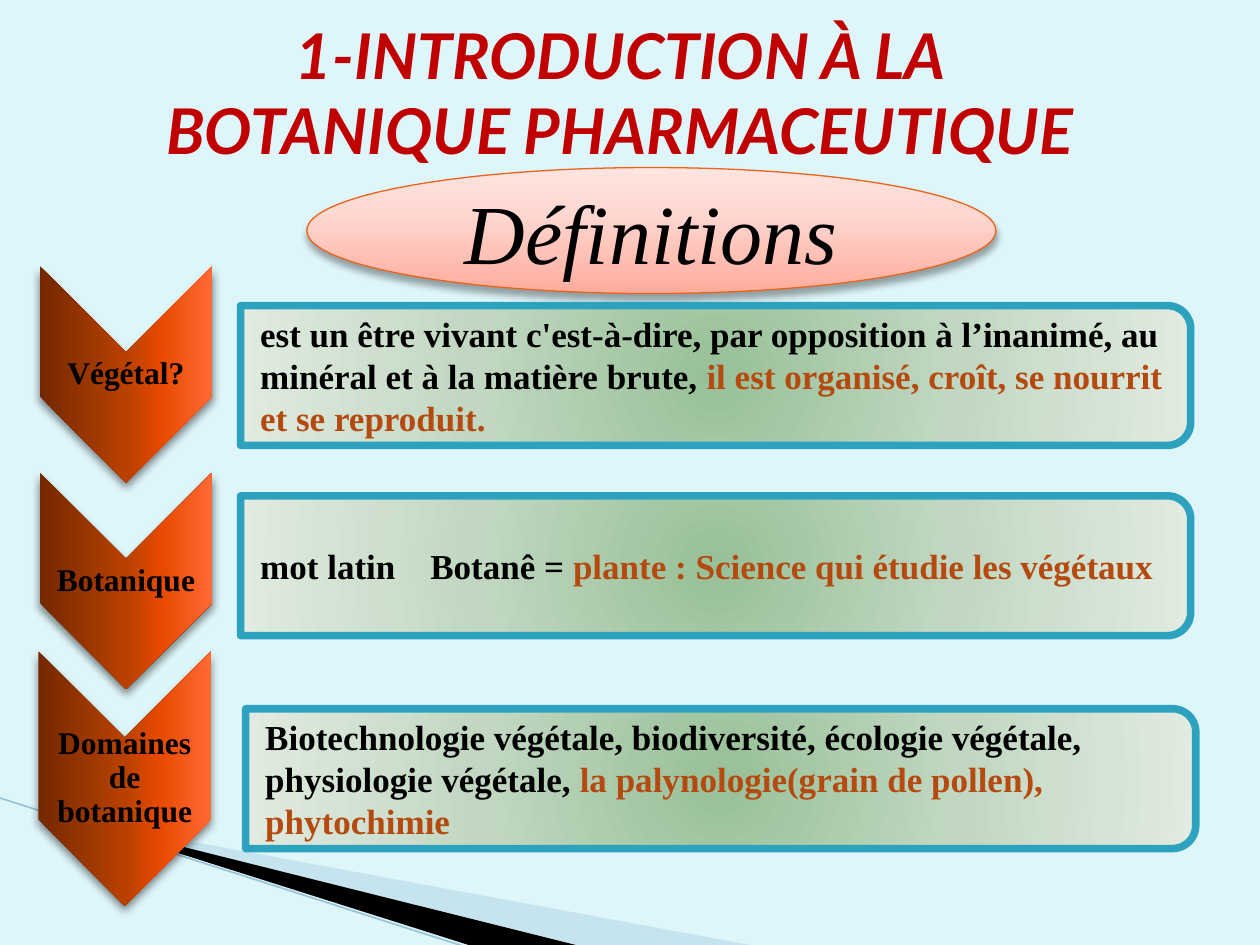
from lxml import etree
from pptx import Presentation
from pptx import util as u
from pptx.dml.color import RGBColor
from pptx.enum import shapes, text
from pptx.oxml import ns

HUES = {
    "back": "DEF5FA", "title": "C00000", "ink": "000000", "accent": "B54A10",
    "teal": "2DA2BF", "orange": "EB641B", "mist": "A0CBDC", "thread": "97C5D8",
}
BLUSH = [(0, "FFAC9C"), (65, "FFD8D2"), (100, "FFE4DF")]
EMBER = [(0, "732800"), (50, "B94100"), (70, "E64900"), (100, "FF6933")]
LEAF = [(0, "98C098"), (50, "C1D7C1"), (100, "E1EBE1")]
SERIF = "Times New Roman"

ROWS = [
    ("Végétal?", 1, 2.97, 1.72, 5.68, 2.98,
     "est un être vivant c'est-à-dire, par opposition à l’inanimé, au minéral et à la matière brute, ",
     "il est organisé, croît, se nourrit et se reproduit."),
    ("Botanique", 1, 4.61, 1.72, 5.68, 4.49,
     "mot latin\tBotanê = ",
     "plante : Science qui étudie les végétaux"),
    ("Domaines de botanique", 0.99, 6.18, 2.02, 5.72, 6.18,
     "Biotechnologie végétale, biodiversité, écologie végétale, physiologie végétale, ",
     "la palynologie(grain de pollen), phytochimie"),
]


def rgb(name):
    return RGBColor.from_string(HUES[name])


def sub(node, tag, **attrs):
    made = etree.SubElement(node, ns.qn(tag))
    for key, val in attrs.items():
        made.set(key, str(val))
    return made


def style(run, size, hue, font=SERIF, bold=False, slant=False):
    run.font.name, run.font.size = font, u.Pt(size)
    run.font.bold, run.font.italic = bold, slant
    run.font.color.rgb = rgb(hue)


def blend(shape, stops, round_out=False):
    shape.fill.background()
    old = shape.element.spPr.find(ns.qn("a:noFill"))
    grad = etree.Element(ns.qn("a:gradFill"), rotWithShape="1")
    steps = sub(grad, "a:gsLst")
    for pos, hue in stops:
        sub(sub(steps, "a:gs", pos=pos * 1000), "a:srgbClr", val=hue)
    if round_out:
        way = sub(grad, "a:path", path="circle")
        sub(way, "a:fillToRect", l=50000, t=50000, r=50000, b=50000)
    else:
        sub(grad, "a:lin", ang=270 * 60000, scaled=0)
    old.getparent().replace(old, grad)


def shade(shape, alpha, blur):
    list_node = shape.element.spPr.find(ns.qn("a:effectLst"))
    cast = sub(list_node, "a:outerShdw", blurRad=u.Pt(blur), dist=u.Pt(3),
               dir=90 * 60000, rotWithShape=0)
    sub(sub(cast, "a:srgbClr", val=HUES["ink"]), "a:alpha", val=alpha * 1000)


def add_shape(slide, kind, mid_x, mid_y, wide, high, turn=0):
    shape = slide.shapes.add_shape(
        kind, u.Inches(mid_x - wide / 2), u.Inches(mid_y - high / 2),
        u.Inches(wide), u.Inches(high))
    shape.rotation = turn
    shape.shadow.inherit = False
    shape.line.fill.background()
    return shape


def edge(shape, hue, width):
    shape.line.color.rgb = rgb(hue)
    shape.line.width = u.Pt(width)


def add_wedge(slide, points, hue, alpha=100):
    dots = [(u.Inches(x), u.Inches(y)) for x, y in points]
    pen = slide.shapes.build_freeform(*dots[0])
    pen.add_line_segments(dots[1:], close=True)
    wedge = pen.convert_to_shape()
    wedge.shadow.inherit = False
    wedge.fill.solid()
    wedge.fill.fore_color.rgb = rgb(hue)
    wedge.line.fill.background()
    if alpha < 100:
        tint = wedge.element.spPr.find(ns.qn("a:solidFill"))[0]
        sub(tint, "a:alpha", val=alpha * 1000)


def add_thread(slide):
    line = slide.shapes.add_connector(
        shapes.MSO_CONNECTOR.STRAIGHT, u.Inches(-0.01), u.Inches(6.33),
        u.Inches(3.71), u.Inches(7.52))
    edge(line, "thread", 0.95)
    sub(line.element.spPr, "a:effectLst")


def add_title(slide):
    title = slide.shapes.title
    title.left, title.top = u.Inches(1.09), u.Inches(0.08)
    title.width, title.height = u.Inches(7.66), u.Inches(1.31)
    frame = title.text_frame
    frame.text = "1-INTRODUCTION À LA BOTANIQUE PHARMACEUTIQUE"
    frame.auto_size = text.MSO_AUTO_SIZE.NONE
    frame.vertical_anchor = text.MSO_ANCHOR.TOP
    frame.paragraphs[0].alignment = text.PP_ALIGN.CENTER
    style(frame.paragraphs[0].runs[0], 36, "title", "Lato", True, True)


def add_oval(slide):
    oval = add_shape(slide, shapes.MSO_SHAPE.OVAL, 5.17, 1.83, 5.47, 1)
    blend(oval, BLUSH)
    edge(oval, "orange", 0.75)
    shade(oval, 35, 4)
    frame = oval.text_frame
    frame.text = "Définitions"
    frame.vertical_anchor = text.MSO_ANCHOR.MIDDLE
    frame.paragraphs[0].alignment = text.PP_ALIGN.CENTER
    style(frame.paragraphs[0].runs[0], 48, "ink", slant=True)


def add_text(slide, mid_x, mid_y, wide, high, inset=0.01):
    box = slide.shapes.add_textbox(
        u.Inches(mid_x - wide / 2), u.Inches(mid_y - high / 2),
        u.Inches(wide), u.Inches(high))
    frame = box.text_frame
    frame.word_wrap = True
    frame.vertical_anchor = text.MSO_ANCHOR.MIDDLE
    frame.margin_left = u.Inches(inset)
    frame.margin_top = frame.margin_right = frame.margin_bottom = u.Inches(0.01)
    return frame.paragraphs[0]


def add_label(slide, words, mid_x, mid_y, high):
    arrow = add_shape(slide, shapes.MSO_SHAPE.CHEVRON, mid_x, mid_y, high, 1.37, 90)
    blend(arrow, EMBER)
    shade(arrow, 45, 5)
    para = add_text(slide, mid_x, mid_y, 1.37, 0.52)
    para.text = words
    para.alignment = text.PP_ALIGN.CENTER
    para.line_spacing = 0.9
    style(para.runs[0], 18, "ink", bold=True)


def add_panel(slide, mid_x, mid_y, start, key):
    panel = add_shape(slide, shapes.MSO_SHAPE.ROUND_2_SAME_RECTANGLE,
                      mid_x, mid_y, 1.11, 7.54, 90)
    blend(panel, LEAF, True)
    edge(panel, "teal", 4.33)
    para = add_text(slide, mid_x - 0.03, mid_y, 7.49, 1, 0.16)
    if "\t" in start:
        tabs = sub(para._p.get_or_add_pPr(), "a:tabLst")
        sub(tabs, "a:tab", pos=u.Inches(1.35), algn="l")
    for words, hue in ((start, "ink"), (key, "accent")):
        run = para.add_run()
        run.text = words
        style(run, 20, hue, bold=True)


def main():
    deck = Presentation()
    deck.slide_width, deck.slide_height = u.Inches(10), u.Inches(7.5)
    slide = deck.slides.add_slide(deck.slide_layouts[5])
    slide.background.fill.solid()
    slide.background.fill.fore_color.rgb = rgb("back")
    add_wedge(slide, [(0.55, 6.5), (5.95, 7.5), (4.56, 7.5)], "mist", 40)
    add_wedge(slide, [(0.53, 6.49), (4.57, 7.5), (3.72, 7.5)], "ink")
    add_thread(slide)
    add_title(slide)
    add_oval(slide)
    for words, arrow_x, arrow_y, high, panel_x, panel_y, start, key in ROWS:
        add_label(slide, words, arrow_x, arrow_y, high)
        add_panel(slide, panel_x, panel_y, start, key)
    deck.save("out.pptx")


if __name__ == "__main__":
    main()
